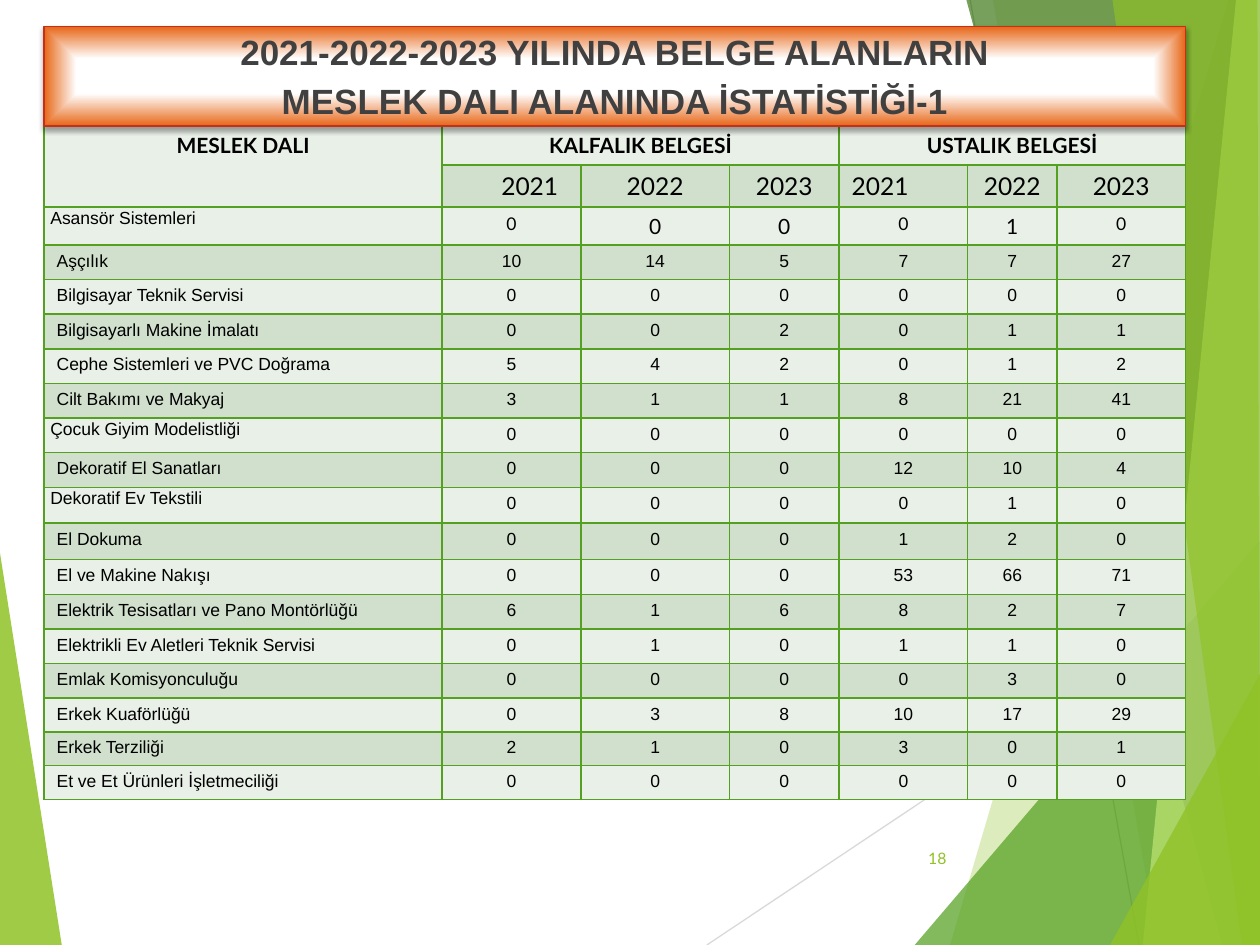
from lxml import etree
from pptx import Presentation
from pptx import util as u
from pptx.dml.color import RGBColor
from pptx.enum import shapes, text
from pptx.oxml import parse_xml
from pptx.oxml.ns import qn

DRAWING_NS = "http://schemas.openxmlformats.org/drawingml/2006/main"
LIGHT, DARK, BORDER = "E9F0E8", "D1DFCD", "54A021"
CENTER, LEFT, RIGHT = text.PP_ALIGN.CENTER, text.PP_ALIGN.LEFT, text.PP_ALIGN.RIGHT

# Background polygons: colour, opacity in percent, corner points in inches
FACETS = [
    ("90C226", 85, [(0, 4.39), (0.49, 7.5), (0, 7.5)]),
    ("90C226", 30, [(9.75, 0), (7.54, 7.5), (10, 7.5), (10, 0)]),
    ("90C226", 20, [(7.88, 0), (9.19, 7.5), (10, 7.5), (10, 0)]),
    ("54A021", 72, [(7.26, 7.5), (10, 4.29), (10, 7.5)]),
    ("3F7819", 70, [(7.67, 0), (9.7, 7.5), (10, 7.5), (10, 0)]),
    ("C0E474", 70, [(9.81, 0), (9.07, 7.5), (10, 7.5), (10, 0)]),
    ("90C226", 65, [(8.83, 0), (9.86, 7.5), (10, 7.5), (9.98, 0)]),
    ("90C226", 80, [(8.81, 7.5), (10, 5.35), (10, 7.5)]),
]

COLUMN_WIDTHS = [3.16, 1.1, 1.18, 0.87, 1.02, 0.71, 1.02]
ROW_HEIGHTS = [0.31, 0.33, 0.3] + [0.275] * 7 + [0.285, 0.29] + [0.275] * 4 + [0.255] * 3
YEARS = ["2021", "2022", "2023"] * 2
TRADES = [
    ("Asansör Sistemleri", [0, 0, 0, 0, 1, 0]),
    ("Aşçılık", [10, 14, 5, 7, 7, 27]),
    ("Bilgisayar Teknik Servisi", [0, 0, 0, 0, 0, 0]),
    ("Bilgisayarlı Makine İmalatı", [0, 0, 2, 0, 1, 1]),
    ("Cephe Sistemleri ve PVC Doğrama", [5, 4, 2, 0, 1, 2]),
    ("Cilt Bakımı ve Makyaj", [3, 1, 1, 8, 21, 41]),
    ("Çocuk Giyim Modelistliği", [0, 0, 0, 0, 0, 0]),
    ("Dekoratif El Sanatları", [0, 0, 0, 12, 10, 4]),
    ("Dekoratif Ev Tekstili", [0, 0, 0, 0, 1, 0]),
    ("El Dokuma", [0, 0, 0, 1, 2, 0]),
    ("El ve Makine Nakışı", [0, 0, 0, 53, 66, 71]),
    ("Elektrik Tesisatları ve Pano Montörlüğü", [6, 1, 6, 8, 2, 7]),
    ("Elektrikli Ev Aletleri Teknik Servisi", [0, 1, 0, 1, 1, 0]),
    ("Emlak Komisyonculuğu", [0, 0, 0, 0, 3, 0]),
    ("Erkek Kuaförlüğü", [0, 3, 8, 10, 17, 29]),
    ("Erkek Terziliği", [2, 1, 0, 3, 0, 1]),
    ("Et ve Et Ürünleri İşletmeciliği", [0, 0, 0, 0, 0, 0]),
]
TIGHT_TRADES = {0, 6, 8}  # names set close to the cell's top left corner
FIRST_ROW_SIZES = [10, 12, 12, 10, 12, 10]


def rgb(color):
    return RGBColor.from_string(color)


def write(frame, content, size=10, font="Arial", color="000000", bold=False,
          align=LEFT, space_before=0):
    for index, line in enumerate(content.split("\n")):
        paragraph = frame.paragraphs[0] if index == 0 else frame.add_paragraph()
        paragraph.alignment = align
        paragraph.space_before = u.Pt(space_before)
        run = paragraph.add_run()
        run.text = line
        run.font.size, run.font.name, run.font.bold = u.Pt(size), font, bold
        run.font.color.rgb = rgb(color)


def add_facet(slide, color, opacity, points):
    corners = [(u.Inches(x), u.Inches(y)) for x, y in points]
    builder = slide.shapes.build_freeform(*corners[0])
    builder.add_line_segments(corners[1:], close=True)
    shape = builder.convert_to_shape()
    shape.shadow.inherit = False
    shape.line.fill.background()
    shape.fill.solid()
    shape.fill.fore_color.rgb = rgb(color)
    color_element = shape.fill._xPr.find(qn("a:solidFill"))[0]
    etree.SubElement(color_element, qn("a:alpha"), val=str(opacity * 1000))


def add_line(slide, start, end, color):
    ends = [u.Inches(value) for value in (*start, *end)]
    line = slide.shapes.add_connector(shapes.MSO_CONNECTOR.STRAIGHT, *ends)
    line.line.color.rgb = rgb(color)
    line.line.width = u.Pt(0.75)
    etree.SubElement(line._element.spPr, qn("a:effectLst"))


def add_background(slide):
    add_facet(slide, *FACETS[0])
    add_line(slide, (5.61, 7.5), (10, 4.57), "D9D9D9")
    add_line(slide, (7.7, 0), (9.04, 7.5), "BFBFBF")
    for facet in FACETS[1:]:
        add_facet(slide, *facet)


def style_cell(cell, fill):
    properties = cell._tc.get_or_add_tcPr()
    for side in ("lnL", "lnR", "lnT", "lnB"):
        properties.append(parse_xml(
            f'<a:{side} xmlns:a="{DRAWING_NS}" w="12700"><a:solidFill>'
            f'<a:srgbClr val="{BORDER}"/></a:solidFill></a:{side}>'))
    cell.fill.solid()
    cell.fill.fore_color.rgb = rgb(fill)


def add_statistics(slide):
    frame = slide.shapes.add_table(
        len(ROW_HEIGHTS), len(COLUMN_WIDTHS), u.Inches(0.35), u.Inches(1),
        u.Inches(sum(COLUMN_WIDTHS)), u.Inches(sum(ROW_HEIGHTS)))
    table = frame.table
    for column, width in zip(table.columns, COLUMN_WIDTHS):
        column.width = u.Inches(width)
    for index, (row, height) in enumerate(zip(table.rows, ROW_HEIGHTS)):
        row.height = u.Inches(height)
        for cell in row.cells:
            style_cell(cell, DARK if index % 2 else LIGHT)

    # Merged headings
    table.cell(0, 0).merge(table.cell(1, 0))
    for first in (1, 4):
        table.cell(0, first).merge(table.cell(0, first + 2))
    headings = {0: "MESLEK DALI", 1: "KALFALIK BELGESİ", 4: "USTALIK BELGESİ"}
    for column, heading in headings.items():
        write(table.cell(0, column).text_frame, heading, size=12, font="Lato",
              bold=True, align=CENTER)

    # Years
    for column, year in enumerate(YEARS, 1):
        write(table.cell(1, column).text_frame, year, size=14, font="Lato",
              align=LEFT if column == 4 else CENTER)
    table.cell(1, 1).margin_left = u.Inches(0.39)

    # Trades and their counts
    for index, (trade, counts) in enumerate(TRADES):
        name_cell = table.cell(index + 2, 0)
        if index in TIGHT_TRADES:
            name_cell.margin_left = u.Inches(0.05)
            name_cell.margin_top = u.Inches(0.01)
            name_cell.margin_bottom = 0
        write(name_cell.text_frame, trade)
        for column, count in enumerate(counts, 1):
            size = 10 if index else FIRST_ROW_SIZES[column - 1]
            write(table.cell(index + 2, column).text_frame, str(count), size=size,
                  font="Arial" if index else "Lato", align=CENTER)


def add_title(slide):
    shape = slide.shapes.add_shape(
        shapes.MSO_SHAPE.RECTANGLE, u.Inches(0.35), u.Inches(0.21),
        u.Inches(9.06), u.Inches(0.79))
    shape.line.color.rgb = rgb("C42F1A")
    shape.line.width = u.Pt(1)
    stops = "".join(
        f'<a:gs pos="{position * 1000}"><a:srgbClr val="{color}"/></a:gs>'
        for position, color in [(0, "FFFFFF"), (35, "FFFFFF"), (100, "E76618")])
    gradient = parse_xml(
        f'<a:gradFill xmlns:a="{DRAWING_NS}" rotWithShape="1"><a:gsLst>{stops}</a:gsLst>'
        '<a:path path="shape"><a:fillToRect l="50000" t="50000" r="50000" b="50000"/>'
        '</a:path></a:gradFill>')
    shadow = parse_xml(
        f'<a:effectLst xmlns:a="{DRAWING_NS}"><a:outerShdw blurRad="38100" dist="25400" '
        'dir="5400000" rotWithShape="0"><a:srgbClr val="000000"><a:alpha val="35000"/>'
        '</a:srgbClr></a:outerShdw></a:effectLst>')
    properties = shape._element.spPr
    properties.find(qn("a:prstGeom")).addnext(gradient)
    properties.append(shadow)
    frame = shape.text_frame
    frame.word_wrap = False
    frame.vertical_anchor = text.MSO_ANCHOR.MIDDLE
    write(frame, "2021-2022-2023 YILINDA BELGE ALANLARIN\nMESLEK DALI ALANINDA İSTATİSTİĞİ-1",
          size=20, color="404040", bold=True, align=CENTER, space_before=4)


def add_page_number(slide):
    box = slide.shapes.add_textbox(
        u.Inches(7.05), u.Inches(6.61), u.Inches(0.56), u.Inches(0.4))
    box.text_frame.word_wrap = True
    box.text_frame.vertical_anchor = text.MSO_ANCHOR.MIDDLE
    write(box.text_frame, "18", size=9, font="Lato", color="90C226", align=RIGHT)


def main():
    presentation = Presentation()
    presentation.slide_width, presentation.slide_height = u.Inches(10), u.Inches(7.5)
    slide = presentation.slides.add_slide(presentation.slide_layouts[6])
    add_background(slide)
    add_page_number(slide)
    add_statistics(slide)
    add_title(slide)
    presentation.save("out.pptx")


if __name__ == "__main__":
    main()
